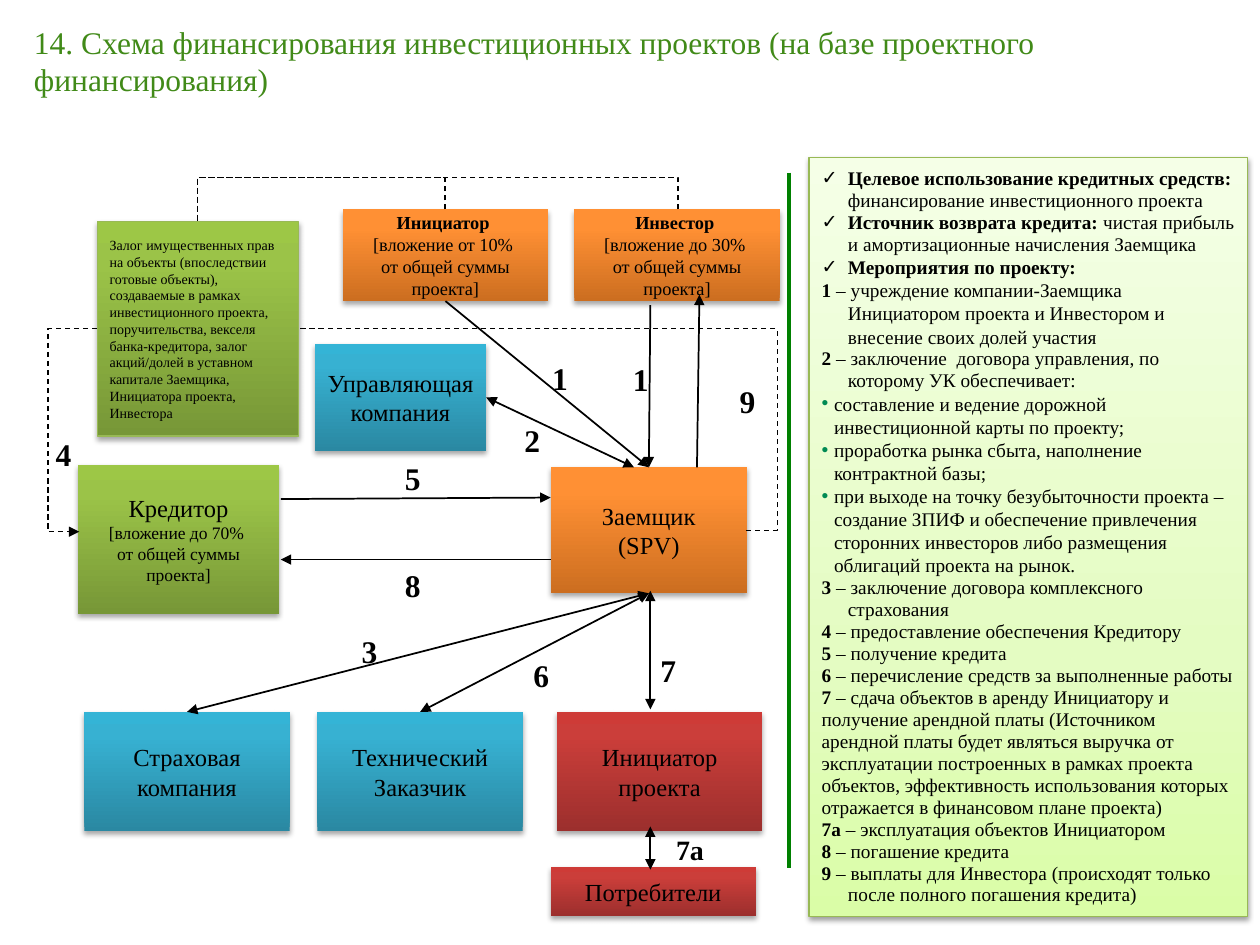
from lxml import etree
from pptx import Presentation
from pptx.dml.color import RGBColor
from pptx.enum.dml import MSO_LINE
from pptx.enum.shapes import MSO_CONNECTOR, MSO_SHAPE
from pptx.enum.text import MSO_ANCHOR, MSO_AUTO_SIZE, PP_ALIGN
from pptx.oxml.ns import qn
from pptx.util import Cm, Pt

FONT = "Times New Roman"
LEFT, CENTER = PP_ALIGN.LEFT, PP_ALIGN.CENTER
TOP, MIDDLE = MSO_ANCHOR.TOP, MSO_ANCHOR.MIDDLE
STRAIGHT, ELBOW = MSO_CONNECTOR.STRAIGHT, MSO_CONNECTOR.ELBOW
BLACK = RGBColor(0, 0, 0)
TITLE_GREEN = RGBColor(0x41, 0x8A, 0x18)
DIVIDER_GREEN = RGBColor(0x00, 0x80, 0x00)
BULLET_GREEN = RGBColor(0x00, 0x8A, 0x53)
EDGE_GREEN = RGBColor(0x98, 0xB9, 0x55)


def gradient(middle, *colors):
    return list(zip((0, middle, 100), map(RGBColor.from_string, colors)))


GREEN = gradient(80, "779737", "9BC348", "9DC746")
ORANGE = gradient(80, "CC6E20", "FF9034", "FF9136")
BLUE = gradient(80, "2A88A2", "37B1D2", "34B4D6")
RED = gradient(80, "9C2F2D", "CB3E3A", "CE3B37")
PALE = gradient(35, "DAFDA7", "E4FCC2", "F5FFE7")

# Content; places are left, top, width, height in cm
TITLE = "14. Схема финансирования инвестиционных проектов (на базе проектного финансирования)"
TITLE_PLACE = (0.43, 0.33, 24.49, 1.8)
PANEL_PLACE = (16.31, 3.18, 8.84, 15.29)
SHARE = "от общей суммы проекта]"

# name: place, fill, [(text, size, bold)]
BOXES = {
    "creditor": ((1.57, 9.37, 4.06, 3), GREEN, [
        ("Кредитор", 14, False), ("[вложение до 70% ", 10, False), (SHARE, 10, False)]),
    "borrower": ((11.1, 9.42, 3.96, 2.54), ORANGE, [
        ("Заемщик", 14, False), ("(SPV)", 14, False)]),
    "pledge": ((1.96, 4.47, 4.06, 4.32), GREEN, [
        ("Залог имущественных прав  на объекты (впоследствии готовые объекты), "
         "создаваемые в рамках инвестиционного проекта,  поручительства, векселя "
         "банка-кредитора, залог акций/долей в уставном капитале Заемщика, "
         "Инициатора проекта, Инвестора", 8, False)]),
    "initiator": ((6.91, 4.22, 4.14, 1.85), ORANGE, [
        ("Инициатор ", 10.5, True), ("[вложение от 10% ", 10.5, False), (SHARE, 10.5, False)]),
    "investor": ((11.58, 4.22, 4.14, 1.85), ORANGE, [
        ("Инвестор ", 10.5, True), ("[вложение до 30% ", 10.5, False), (SHARE, 10.5, False)]),
    "manager": ((6.35, 6.93, 3.45, 2.16), BLUE, [("Управляющая компания", 14, False)]),
    "insurer": ((1.7, 14.35, 4.14, 2.41), BLUE, [("Страховая компания", 14, False)]),
    "customer": ((6.4, 14.35, 4.14, 2.41), BLUE, [("Технический Заказчик", 14, False)]),
    "project": ((11.23, 14.35, 4.14, 2.41), RED, [("Инициатор проекта", 14, False)]),
    "consumers": ((11.1, 17.48, 4.14, 0.99), RED, [("Потребители", 14, False)]),
}

# Ends are points in cm or (box, side); then whether both ends have heads
ARROWS = [
    (("borrower", 2), ("customer", 0), True),
    (("borrower", 2), ("insurer", 0), True),
    ((13.11, 11.91), (13.11, 14.3), True),
    (("initiator", 2), ("borrower", 0), False),
    ((13.11, 6.15), ("borrower", 0), False),
    ((5.66, 10.06), (11.1, 10.03), False),
    ((11.1, 11.28), (5.66, 11.28), False),
    ((14.05, 9.42), (14.1, 5.94), False),
    (("manager", 3), (12.78, 9.42), True),
    ((13.11, 16.66), (13.11, 17.53), True),
]

# start, end, position of the middle leg, upright, arrowhead
DASHED = [
    ((15.04, 10.69), (6.05, 6.63), 15.67, False, False),
    ((1.96, 6.63), (1.6, 10.72), 0.97, False, True),
    ((8.97, 4.22), (3.99, 4.47), 3.58, True, False),
    ((13.67, 4.22), (3.99, 4.47), 3.58, True, False),
]

LABELS = [
    ("1", 10.49, 7.11, 18), ("1", 12.12, 7.14, 18), ("2", 9.93, 8.36, 18),
    ("3", 6.65, 12.62, 18), ("4", 0.48, 8.64, 18), ("5", 7.52, 9.12, 18),
    ("6", 10.11, 13.11, 18), ("7", 12.67, 13, 18), ("8", 7.52, 11.28, 18),
    ("9", 14.27, 7.57, 18), ("7а", 13.11, 16.66, 16),
]

# style: level, hanging indent in cm, bullet, bullet colour
STYLES = {"check": (0, 0.53, "✓", BLACK), "hang": (0, 0.53, None, None),
          "dot": (1, 0.25, "•", BULLET_GREEN), "flush": (0, 0, None, None)}

# style, line spacing, bold text, plain text
NOTES = [
    ("check", 0.95, "Целевое использование кредитных средств: ",
     "финансирование инвестиционного проекта"),
    ("check", 0.95, "Источник возврата кредита: ",
     "чистая прибыль и амортизационные начисления Заемщика"),
    ("check", 1.0, "Мероприятия по проекту:", ""),
    ("hang", 1.0, "1 ", "– учреждение компании-Заемщика Инициатором проекта и "
     "Инвестором и внесение своих долей участия"),
    ("hang", 0.95, "2 ", "– заключение  договора управления, по которому УК обеспечивает:"),
    ("dot", 1.0, "", "составление и ведение дорожной инвестиционной карты по проекту;"),
    ("dot", 1.0, "", "проработка рынка сбыта, наполнение контрактной базы;"),
    ("dot", 1.0, "", "при выходе на точку безубыточности проекта – создание ЗПИФ и обеспечение "
     "привлечения сторонних инвесторов либо размещения облигаций проекта на рынок."),
    ("hang", 0.95, "3 ", "– заключение договора комплексного страхования"),
    ("hang", 0.95, "4 ", "– предоставление обеспечения Кредитору"),
    ("hang", 0.95, "5", " – получение кредита"),
    ("hang", 0.95, "6", " – перечисление средств за выполненные работы"),
    ("flush", 0.95, "7 ", "– сдача объектов в аренду Инициатору и получение арендной платы "
     "(Источником арендной платы будет являться выручка от эксплуатации построенных в рамках "
     "проекта объектов, эффективность использования которых отражается в финансовом плане проекта)"),
    ("hang", 0.95, "7а", " – эксплуатация объектов Инициатором"),
    ("hang", 0.95, "8 ", "– погашение кредита"),
    ("hang", 0.95, "9", " – выплаты для Инвестора (происходят только после полного погашения кредита)"),
]


def add_xml(parent, tag, **attributes):
    return etree.SubElement(parent, qn(tag), {key: str(value) for key, value in attributes.items()})


def write(para, text, size=11, bold=False, color=BLACK, align=LEFT):
    para.alignment = align
    span = para.add_run()
    span.text = text
    span.font.name, span.font.size, span.font.bold = FONT, Pt(size), bold
    span.font.color.rgb = color


def paragraphs(frame, count, anchor):
    frame.word_wrap = True
    frame.vertical_anchor = anchor
    return [frame.paragraphs[0]] + [frame.add_paragraph() for _ in range(count - 1)]


def move(shape, place):
    shape.left, shape.top, shape.width, shape.height = map(Cm, place)


def decorate(shape, stops, edge=None, alpha=35):
    shape.fill.gradient()
    shape.fill.gradient_angle = 90
    stop_list = shape._element.spPr.find(".//" + qn("a:gsLst"))
    stop_list.clear()
    for position, color in stops:
        add_xml(add_xml(stop_list, "a:gs", pos=position * 1000), "a:srgbClr", val=color)
    if edge:
        shape.line.color.rgb, shape.line.width = edge, Pt(0.75)
    else:
        shape.line.fill.background()
    shape.shadow.inherit = False
    shadow = add_xml(shape._element.spPr.find(qn("a:effectLst")), "a:outerShdw",
                     blurRad=Pt(3.1), dist=Pt(1.8), dir=5400000, rotWithShape=0)
    add_xml(add_xml(shadow, "a:srgbClr", val=BLACK), "a:alpha", val=alpha * 1000)


def add_line(page, kind, start, end, width, color=BLACK, dashed=False, head=False, tail=False):
    line = page.shapes.add_connector(kind, *map(Cm, start + end))
    line.line.color.rgb, line.line.width = color, Pt(width)
    if dashed:
        line.line.dash_style = MSO_LINE.DASH
    properties = line._element.spPr
    for tag, wanted in (("a:headEnd", head), ("a:tailEnd", tail)):
        if wanted:
            add_xml(properties.find(qn("a:ln")), tag, type="triangle")
    add_xml(properties, "a:effectLst")
    return line


def add_elbow(page, start, end, bend, upright, tail):
    axis = 1 if upright else 0
    ratio = (bend - start[axis]) / (end[axis] - start[axis])
    if upright:  # a quarter turn around the common centre
        center_x, center_y = (start[0] + end[0]) / 2, (start[1] + end[1]) / 2
        half_x, half_y = abs(end[1] - start[1]) / 2, abs(end[0] - start[0]) / 2
        start = (center_x + half_x, center_y + half_y)
        end = (center_x - half_x, center_y - half_y)
    line = add_line(page, ELBOW, start, end, 0.75, dashed=True, tail=tail)
    properties = line._element.spPr
    if upright:
        properties.find(qn("a:xfrm")).set("rot", "16200000")
    guides = properties.find(qn("a:prstGeom")).find(qn("a:avLst"))
    add_xml(guides, "a:gd", name="adj1", fmla=f"val {round(ratio * 100000)}")


def main():
    deck = Presentation()
    deck.slide_width, deck.slide_height = Cm(25.4), Cm(19.05)
    page = deck.slides.add_slide(deck.slide_layouts[1])

    # Title and divider
    title, panel = page.shapes.title, page.placeholders[1]
    move(title, TITLE_PLACE)
    title.text_frame.auto_size = MSO_AUTO_SIZE.SHAPE_TO_FIT_TEXT
    write(paragraphs(title.text_frame, 1, TOP)[0], TITLE, size=18, color=TITLE_GREEN)
    add_line(page, STRAIGHT, (15.9, 3.48), (15.9, 17.5), 2.5, color=DIVIDER_GREEN)

    # Participants
    boxes = {}
    for name, (place, stops, lines) in BOXES.items():
        box = boxes[name] = page.shapes.add_shape(MSO_SHAPE.RECTANGLE, *map(Cm, place))
        pledge = name == "pledge"
        decorate(box, stops, edge=EDGE_GREEN if pledge else None)
        for para, (text, size, bold) in zip(paragraphs(box.text_frame, len(lines), MIDDLE), lines):
            write(para, text, size=size, bold=bold, align=LEFT if pledge else CENTER)

    # Links
    for link in DASHED:
        add_elbow(page, *link)
    for start, end, both in ARROWS:
        points = [(0, 0) if isinstance(place[0], str) else place for place in (start, end)]
        line = add_line(page, STRAIGHT, *points, 1, head=both, tail=True)
        for place, join in ((start, line.begin_connect), (end, line.end_connect)):
            if isinstance(place[0], str):
                join(boxes[place[0]], place[1])

    # Step numbers
    for text, left, top, size in LABELS:
        label = page.shapes.add_textbox(Cm(left), Cm(top), Cm(1.6), Cm(1.02 if size == 18 else 0.94))
        write(paragraphs(label.text_frame, 1, TOP)[0], text, size=size, bold=True, align=CENTER)
        label.text_frame.auto_size = MSO_AUTO_SIZE.SHAPE_TO_FIT_TEXT

    # Explanations
    move(panel, PANEL_PLACE)
    decorate(panel, PALE, edge=EDGE_GREEN, alpha=38)
    panel.text_frame.auto_size = MSO_AUTO_SIZE.NONE
    for para, (style, spacing, strong, plain) in zip(
            paragraphs(panel.text_frame, len(NOTES), MIDDLE), NOTES):
        level, indent, bullet, color = STYLES[style]
        para.level, para.line_spacing, para.space_before = level, spacing, Pt(0)
        properties = para._p.get_or_add_pPr()
        properties.set("marL", str(Cm(indent)))
        properties.set("indent", str(-Cm(indent)))
        if bullet:
            add_xml(add_xml(properties, "a:buClr"), "a:srgbClr", val=color)
            add_xml(properties, "a:buChar", char=bullet)
        else:
            add_xml(properties, "a:buNone")
        for text, bold in ((strong, True), (plain, False)):
            if text:
                write(para, text, bold=bold)

    deck.save("out.pptx")


if __name__ == "__main__":
    main()
